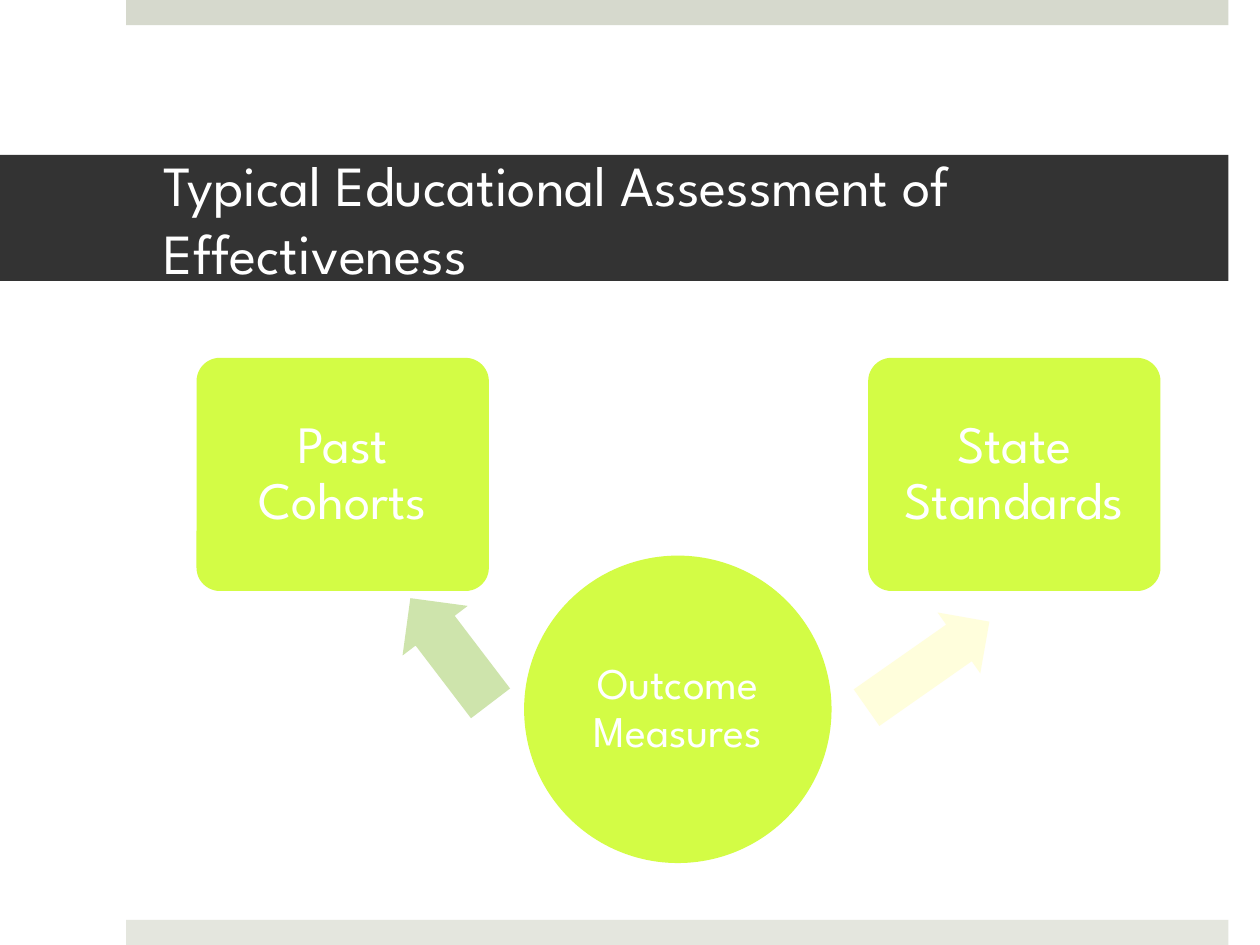
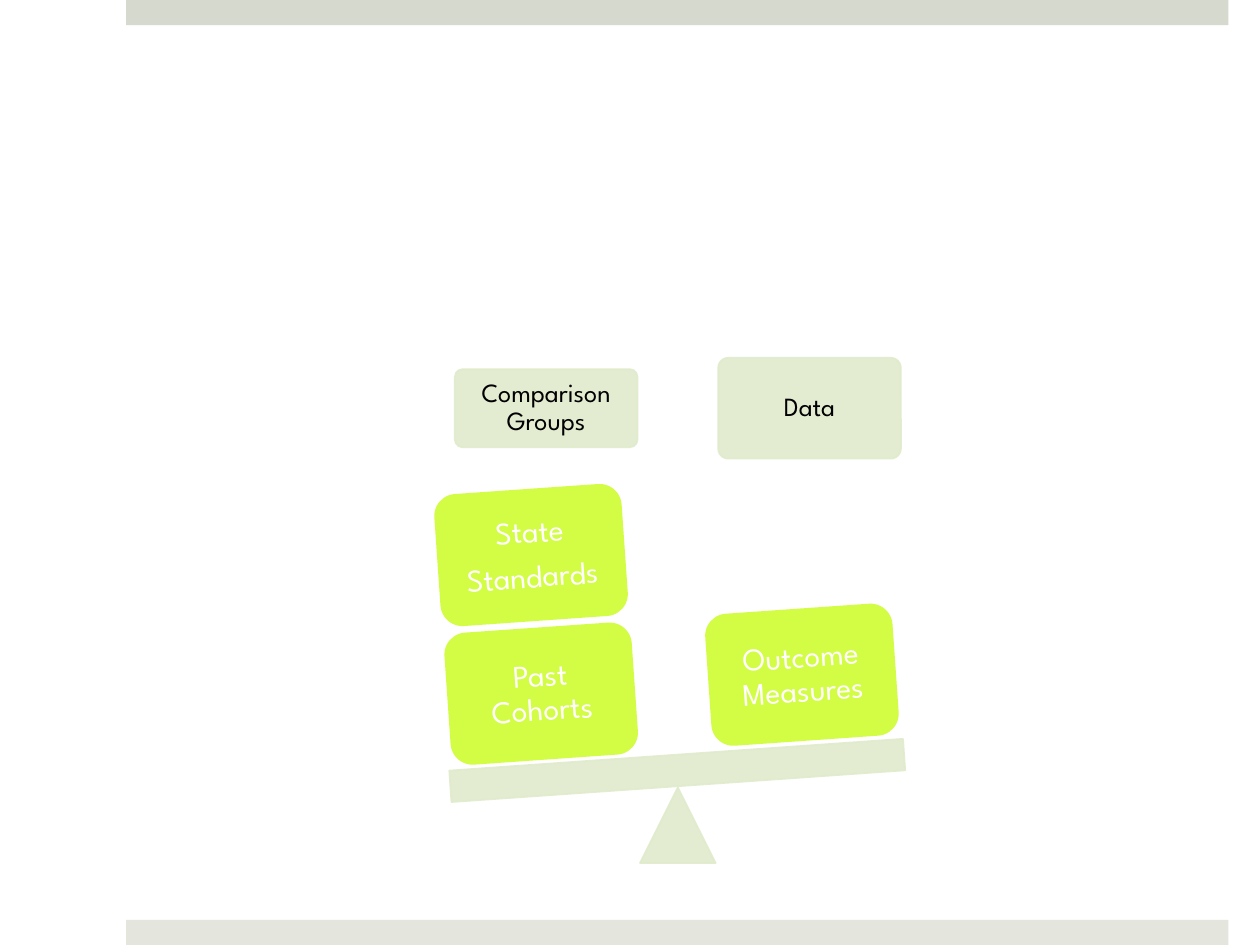
"""Build two slides on how school outcome measures are compared."""
import pptx
import pptx.dml.color
import pptx.enum.shapes
import pptx.enum.text
import pptx.oxml
import pptx.oxml.ns
import pptx.util

KIND = pptx.enum.shapes.MSO_SHAPE
ALIGN = pptx.enum.text.PP_ALIGN
HUES = {
    "top": "D6D9CD", "foot": "E4E6DE", "title": "333333",
    "lime": "D3FC45", "green": "CEE4AC", "cream": "FFFEDC",
    "pale": "E0EBCC", "white": "FFFFFF", "black": "000000",
}
FONT = "League Spartan"
TILT = 356


def inch(num):
    return pptx.util.Cm(num * 2.54)


class Deck:
    def __init__(self):
        self.file = pptx.Presentation()
        self.file.slide_width = inch(10)
        self.file.slide_height = inch(7.5)
        self.slide = None

    def page(self):
        self.slide = self.file.slides.add_slide(self.file.slide_layouts[6])
        self.shape(KIND.RECTANGLE, (1, 0, 8.75, 0.2), "top")
        self.shape(KIND.RECTANGLE, (1, 7.3, 8.75, 0.2), "foot")

    def shape(self, kind, box, hue, turn=0, adj=()):
        item = self.slide.shapes.add_shape(kind, *map(inch, box))
        item.shadow.inherit = False
        item.fill.solid()
        item.fill.fore_color.rgb = pptx.dml.color.RGBColor.from_string(HUES[hue])
        item.line.fill.background()
        item.rotation = turn
        for spot, part in enumerate(adj):
            item.adjustments[spot] = part
        return item

    def text(self, item, lines, size, pads, hue="white", align=ALIGN.CENTER, pitch=0.9):
        frame = item.text_frame
        frame.word_wrap = True
        frame.vertical_anchor = pptx.enum.text.MSO_ANCHOR.MIDDLE
        (frame.margin_left, frame.margin_top,
         frame.margin_right, frame.margin_bottom) = map(inch, pads)
        for spot, line in enumerate(lines):
            para = frame.add_paragraph() if spot else frame.paragraphs[0]
            para.alignment = align
            para.line_spacing = pitch
            if line != lines[-1]:
                para.space_after = pptx.util.Pt(round(size * 0.35, 1))
            run = para.add_run()
            run.text = line
            run.font.name = FONT
            run.font.size = pptx.util.Pt(size)
            run.font.color.rgb = pptx.dml.color.RGBColor.from_string(HUES[hue])

    def title(self, words):
        band = self.shape(KIND.RECTANGLE, (0, 1.23, 9.75, 1), "title")
        self.text(band, [words], 32.4, (1.3, 0.05, 0.3, 0.05),
                  align=ALIGN.LEFT, pitch=1)

    def node(self, kind, box, lines, size, pad, turn=0, adj=()):
        item = self.shape(kind, box, "lime", turn, adj)
        self.text(item, lines, size, [pad] * 4)

    def arrow(self, box, hue, turn):
        self.shape(KIND.LEFT_ARROW, box, hue, turn, (0.6, 0.5))

    def glass(self, kind, box, turn=0, adj=()):
        item = self.shape(kind, box, "pale", turn, adj)
        item.line.color.rgb = pptx.dml.color.RGBColor.from_string(HUES["pale"])
        item.line.width = pptx.util.Pt(1)
        for tint in item.fill._xPr.iter(pptx.oxml.ns.qn("a:srgbClr")):
            alpha = pptx.oxml.parse_xml(
                f'<a:alpha {pptx.oxml.ns.nsdecls("a")} val="90000"/>')
            tint.append(alpha)
        return item

    def label(self, box, words):
        item = self.glass(KIND.ROUNDED_RECTANGLE, box, adj=(0.1,))
        self.text(item, [words], 15, [0.06] * 4, "black")


def main():
    deck = Deck()

    deck.page()
    deck.title("Typical Educational Assessment of Effectiveness")
    deck.node(KIND.OVAL, (4.16, 4.41, 2.44, 2.44), ["Outcome Measures"], 25, 0.02)
    deck.arrow((3.05, 4.84, 1.05, 0.65), "green", 52.7)
    deck.arrow((6.77, 4.98, 1.19, 0.59), "cream", 145)
    for left, words in ((1.56, "Past Cohorts"), (6.89, "State Standards")):
        deck.node(KIND.ROUNDED_RECTANGLE, (left, 2.84, 2.32, 1.85),
                  [words], 30, 0.06, adj=(0.1,))

    deck.page()
    deck.label((3.61, 2.93, 1.45, 0.62), "Comparison Groups")
    deck.label((5.7, 2.84, 1.45, 0.8), "Data")
    deck.glass(KIND.ISOSCELES_TRIANGLE, (5.08, 6.25, 0.6, 0.6))
    deck.glass(KIND.RECTANGLE, (3.57, 5.99, 3.61, 0.25), TILT)
    for left, top, lines in (
        (3.55, 4.98, ["Past Cohorts"]),
        (3.47, 3.88, ["State", "Standards"]),
        (5.62, 4.83, ["Outcome Measures"]),
    ):
        deck.node(KIND.ROUNDED_RECTANGLE, (left, top, 1.49, 1.05),
                  lines, 18, 0.07, TILT)

    deck.file.save("out.pptx")


if __name__ == "__main__":
    main()
